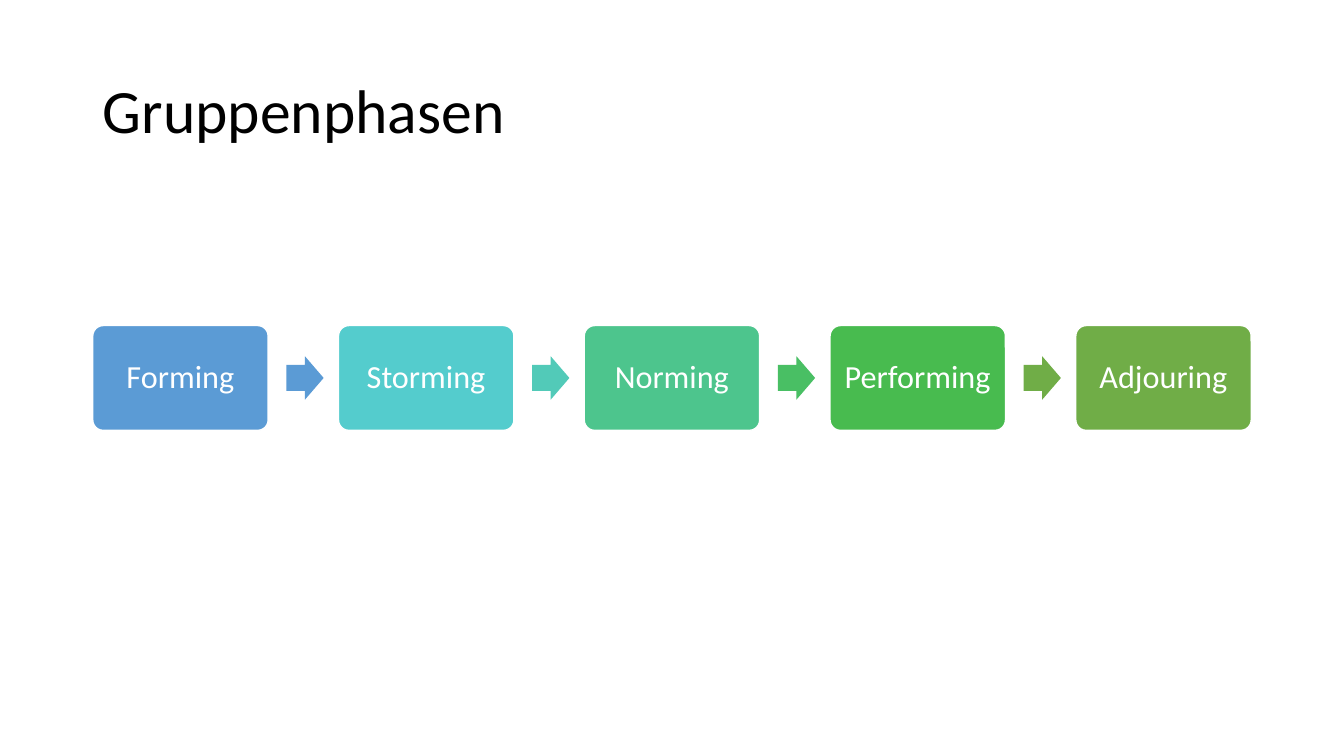
from pptx import Presentation
from pptx.dml.color import RGBColor
from pptx.enum.shapes import MSO_SHAPE
from pptx.enum.text import MSO_ANCHOR, PP_ALIGN
from pptx.util import Inches, Pt

# Phase name, box colour, colour of the arrow that follows
PHASES = [
    ("Forming", "5B9BD5", "5B9BD5"),
    ("Storming", "54CCCD", "52CAB8"),
    ("Norming", "4DC58D", "49BF64"),
    ("Performing", "48BB4F", "70AD47"),
    ("Adjouring", "70AD47", None),
]
LEFT, SPAN, MID = 0.92, 11.49, 3.75
BOX_W, BOX_H = 1.74, 1.04
ARROW_W, ARROW_H, GAP = 0.37, 0.43, 0.18
STEP = (SPAN - BOX_W) / (len(PHASES) - 1)


def color(code):
    return RGBColor.from_string(code)


def style(par, size, code, align):
    par.alignment = align
    par.line_spacing = 0.9
    for run in par.runs:
        run.font.name = "Calibri"
        run.font.size = Pt(size)
        run.font.color.rgb = color(code)


def add_title(slide, text):
    title = slide.shapes.title
    title.left, title.top = Inches(LEFT), Inches(0.4)
    title.width, title.height = Inches(11.5), Inches(1.45)
    frame = title.text_frame
    frame.text = text
    frame.vertical_anchor = MSO_ANCHOR.MIDDLE
    style(frame.paragraphs[0], 44, "000000", PP_ALIGN.LEFT)


def add_shape(slide, kind, left, width, height, fill):
    """Add a filled shape centred on the row's middle line."""
    shape = slide.shapes.add_shape(
        kind, Inches(left), Inches(MID - height / 2), Inches(width), Inches(height))
    shape.shadow.inherit = False
    shape.fill.solid()
    shape.fill.fore_color.rgb = color(fill)
    return shape


def add_box(slide, left, text, fill):
    box = add_shape(slide, MSO_SHAPE.ROUNDED_RECTANGLE, left, BOX_W, BOX_H, fill)
    box.adjustments[0] = 0.1
    box.line.color.rgb = color("FFFFFF")
    box.line.width = Pt(1)
    frame = box.text_frame
    frame.text = text
    frame.word_wrap = True
    frame.vertical_anchor = MSO_ANCHOR.MIDDLE
    frame.margin_left = frame.margin_right = Inches(0.1)
    frame.margin_top = frame.margin_bottom = Inches(0.1)
    style(frame.paragraphs[0], 23, "FFFFFF", PP_ALIGN.CENTER)


def add_arrow(slide, left, fill):
    arrow = add_shape(slide, MSO_SHAPE.RIGHT_ARROW, left, ARROW_W, ARROW_H, fill)
    arrow.adjustments[0] = 0.6
    arrow.adjustments[1] = 0.5
    arrow.line.fill.background()


def main():
    deck = Presentation()
    deck.slide_width, deck.slide_height = Inches(13.33), Inches(7.5)
    slide = deck.slides.add_slide(deck.slide_layouts[5])
    add_title(slide, "Gruppenphasen")
    for i, (name, fill, next_fill) in enumerate(PHASES):
        left = LEFT + i * STEP
        add_box(slide, left, name, fill)
        if next_fill:
            add_arrow(slide, left + BOX_W + GAP, next_fill)
    deck.save("out.pptx")


if __name__ == "__main__":
    main()
